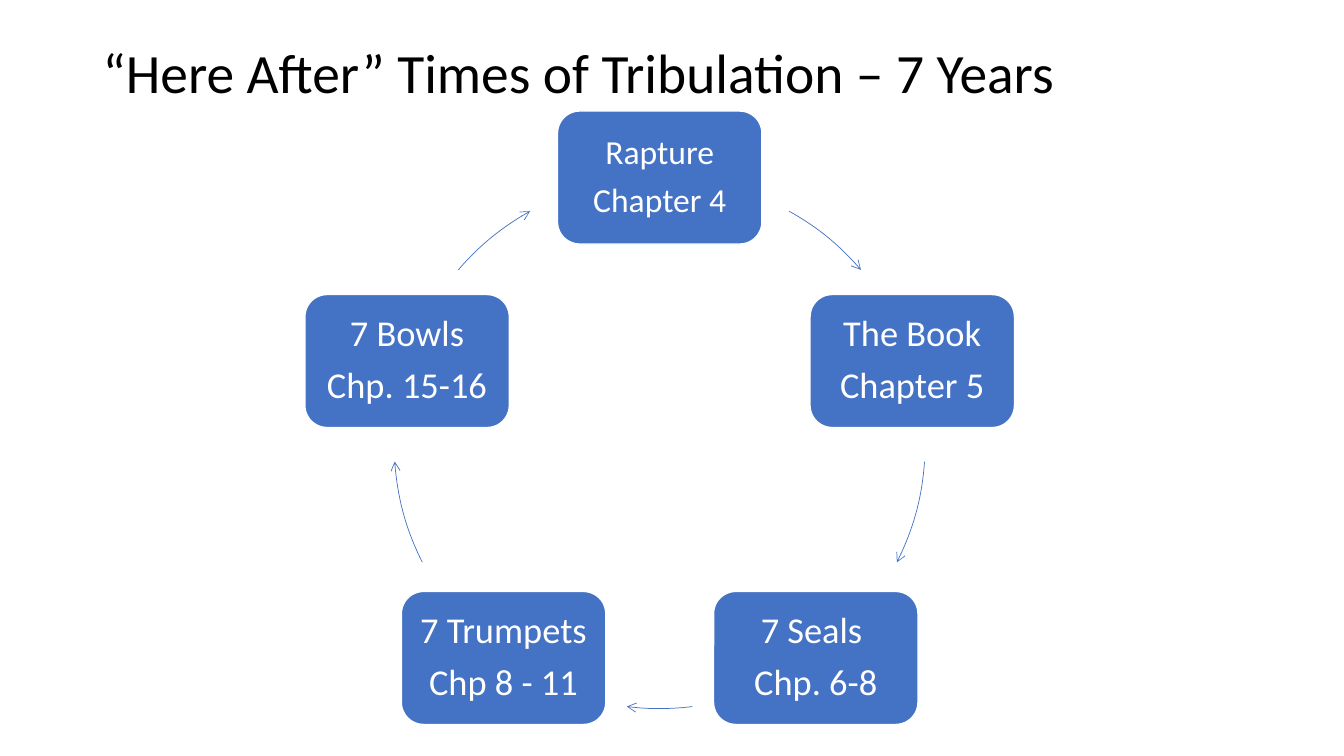
import math

import lxml.etree
import pptx
import pptx.dml.color
import pptx.enum.shapes
import pptx.enum.text
import pptx.oxml.ns
import pptx.util

Pt = pptx.util.Pt
SHAPE = pptx.enum.shapes.MSO_SHAPE
ALIGN = pptx.enum.text.PP_ALIGN
MIDDLE = pptx.enum.text.MSO_ANCHOR.MIDDLE

BLUE = pptx.dml.color.RGBColor(0x44, 0x72, 0xC4)
WHITE = pptx.dml.color.RGBColor(0xFF, 0xFF, 0xFF)
BLACK = pptx.dml.color.RGBColor(0x00, 0x00, 0x00)

CENTER_X, CENTER_Y, RADIUS = 471.2, 316.5, 189.7
BOX_W, BOX_H = 146, 95

# Clockwise from the top: lines, font size, arrow start and end in degrees from 12 o'clock
STAGES = [
    ("Rapture\nChapter 4", 24, 29.2, 49.3),
    ("The Book\nChapter 5", 26, 94, 116.7),
    ("7 Seals \nChp. 6-8", 26, 172.9, 187.1),
    ("7 Trumpets\nChp 8 - 11", 26, 243.3, 266),
    ("7 Bowls\nChp. 15-16", 26, 310.7, 330.8),
]


def format_paragraph(p, size, color, align):
    p.alignment = align
    p.line_spacing = 0.9
    for r in p.runs:
        r.font.name = "Calibri"
        r.font.size = Pt(size)
        r.font.color.rgb = color


prs = pptx.Presentation()
prs.slide_width, prs.slide_height = Pt(960), Pt(540)
s = prs.slides.add_slide(prs.slide_layouts[5])

title = s.shapes.title
title.left, title.top, title.width, title.height = Pt(66.2), Pt(28.8), Pt(828), Pt(50.4)
tf = title.text_frame
tf.text = "“Here After” Times of Tribulation – 7 Years"
tf.auto_size = pptx.enum.text.MSO_AUTO_SIZE.NONE
tf.vertical_anchor = MIDDLE
format_paragraph(tf.paragraphs[0], 39.6, BLACK, ALIGN.LEFT)

for i, (text, size, start, end) in enumerate(STAGES):
    angle = 2 * math.pi * i / len(STAGES)
    x = CENTER_X + RADIUS * math.sin(angle)
    y = CENTER_Y - RADIUS * math.cos(angle)
    box = s.shapes.add_shape(SHAPE.ROUNDED_RECTANGLE, Pt(x - BOX_W / 2), Pt(y - BOX_H / 2),
                             Pt(BOX_W), Pt(BOX_H))
    box.shadow.inherit = False
    box.fill.solid()
    box.fill.fore_color.rgb = BLUE
    box.line.color.rgb = WHITE
    box.line.width = Pt(1)
    tf = box.text_frame
    tf.text = text
    tf.word_wrap = True
    tf.vertical_anchor = MIDDLE
    tf.margin_left = tf.margin_right = tf.margin_top = tf.margin_bottom = Pt(7.2)
    for p in tf.paragraphs:
        format_paragraph(p, size, WHITE, ALIGN.CENTER)
        p.space_after = Pt(0.35 * size)

    arrow = s.shapes.add_shape(SHAPE.ARC, Pt(CENTER_X - RADIUS), Pt(CENTER_Y - RADIUS),
                               Pt(2 * RADIUS), Pt(2 * RADIUS))
    arrow.shadow.inherit = False
    # Arc angles run clockwise from 3 o'clock; one degree is 0.6 adjustment units
    arrow.adjustments[0] = (start - 90) % 360 * 0.6
    arrow.adjustments[1] = (end - 90) % 360 * 0.6
    arrow.fill.background()
    arrow.line.color.rgb = BLUE
    arrow.line.width = Pt(0.5)
    ln = arrow.line._get_or_add_ln()
    lxml.etree.SubElement(ln, pptx.oxml.ns.qn("a:tailEnd"), type="arrow")

prs.save("out.pptx")
